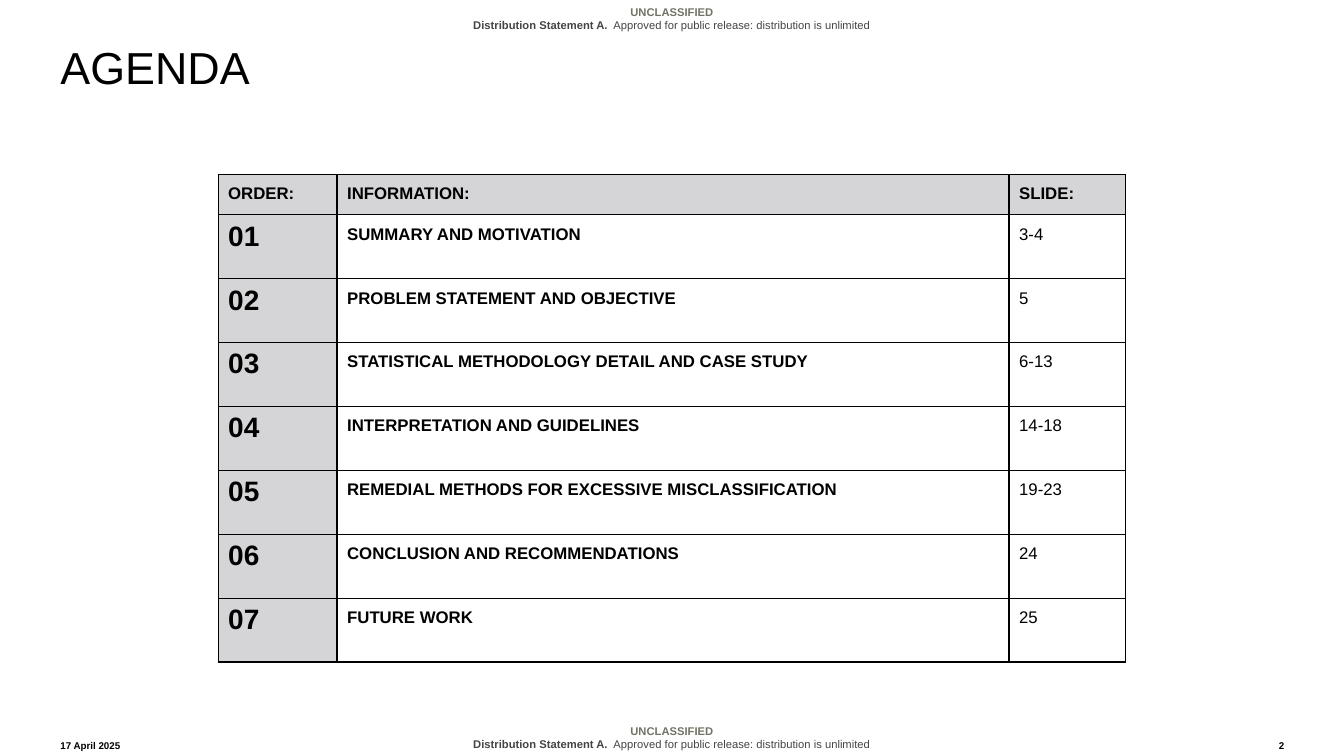
import pptx
import pptx.dml.color
import pptx.enum.text
import pptx.oxml
import pptx.oxml.ns
import pptx.util

Pt = pptx.util.Pt
RGBColor = pptx.dml.color.RGBColor
ALIGN = pptx.enum.text.PP_ALIGN
ANCHOR = pptx.enum.text.MSO_ANCHOR

BLACK = RGBColor(0x00, 0x00, 0x00)
OLIVE = RGBColor(0x72, 0x73, 0x65)
CHARCOAL = RGBColor(0x44, 0x44, 0x44)
GREY = RGBColor(0xD5, 0xD5, 0xD7)

HEADERS = ["ORDER:", "INFORMATION:", "SLIDE:"]
TOPICS = [
    ("SUMMARY AND MOTIVATION", "3-4"),
    ("PROBLEM STATEMENT AND OBJECTIVE", "5"),
    ("STATISTICAL METHODOLOGY DETAIL AND CASE STUDY", "6-13"),
    ("INTERPRETATION AND GUIDELINES", "14-18"),
    ("REMEDIAL METHODS FOR EXCESSIVE MISCLASSIFICATION", "19-23"),
    ("CONCLUSION AND RECOMMENDATIONS", "24"),
    ("FUTURE WORK", "25"),
]


def add_run(p, text, size=12, bold=False, color=BLACK, font="Arial"):
    r = p.add_run()
    r.text = text
    r.font.name = font
    r.font.size = Pt(size)
    r.font.bold = bold
    r.font.color.rgb = color


def set_margins(item, left, top, right, bottom):
    item.margin_left, item.margin_top = Pt(left), Pt(top)
    item.margin_right, item.margin_bottom = Pt(right), Pt(bottom)


def add_borders(cell, width=1, color=BLACK):
    tc_pr = cell._tc.get_or_add_tcPr()
    for side in "LRTB":
        tc_pr.append(pptx.oxml.parse_xml(
            f'<a:ln{side} {pptx.oxml.ns.nsdecls("a")} w="{Pt(width)}">'
            f'<a:solidFill><a:srgbClr val="{color}"/></a:solidFill></a:ln{side}>'))


class AgendaSlide:
    def __init__(self, prs):
        self.s = prs.slides.add_slide(prs.slide_layouts[5])

    def title(self, text, left, top, width, height):
        sp = self.s.shapes.title
        sp.left, sp.top, sp.width, sp.height = map(Pt, (left, top, width, height))
        tf = sp.text_frame
        tf.auto_size = pptx.enum.text.MSO_AUTO_SIZE.NONE
        tf.vertical_anchor = ANCHOR.TOP
        set_margins(tf, 0, 0, 0, 0)
        p = tf.paragraphs[0]
        p.alignment = ALIGN.LEFT
        p.line_spacing = 0.9
        add_run(p, text, size=32)

    def text_box(self, left, top, width, height, align, anchor):
        sp = self.s.shapes.add_textbox(Pt(left), Pt(top), Pt(width), Pt(height))
        tf = sp.text_frame
        tf.word_wrap = True
        tf.vertical_anchor = anchor
        set_margins(tf, 0, 3.6, 0, 3.6)
        tf.paragraphs[0].alignment = align
        return tf

    def marking(self, top, anchor):
        """Add the classification line and distribution statement."""
        tf = self.text_box(109.2, top, 741.6, 26.6, ALIGN.CENTER, anchor)
        add_run(tf.paragraphs[0], "UNCLASSIFIED", size=8, bold=True, color=OLIVE)
        p = tf.add_paragraph()
        p.alignment = ALIGN.CENTER
        add_run(p, "Distribution Statement A.", size=8, bold=True, color=CHARCOAL)
        add_run(p, "  Approved for public release: distribution is unlimited",
                size=8, color=CHARCOAL)

    def footer(self, text, left, width, align):
        tf = self.text_box(left, 522, width, 18, align, ANCHOR.BOTTOM)
        add_run(tf.paragraphs[0], text, size=7, bold=True)

    def cell(self, cell, text, bottom=18, fill=None, spacing=None, **style):
        set_margins(cell, 7.2, 7.2, 7.2, bottom)
        add_borders(cell)
        if fill is None:
            cell.fill.background()
        else:
            cell.fill.solid()
            cell.fill.fore_color.rgb = fill
        p = cell.text_frame.paragraphs[0]
        p.line_spacing = spacing
        add_run(p, text, **style)

    def agenda(self, left, top, widths, header_height, row_height):
        heights = [header_height] + [row_height] * len(TOPICS)
        table = self.s.shapes.add_table(
            len(heights), len(widths), Pt(left), Pt(top),
            Pt(sum(widths)), Pt(sum(heights))).table
        table.horz_banding = False
        table.first_row = False
        for column, width in zip(table.columns, widths):
            column.width = Pt(width)
        for row, height in zip(table.rows, heights):
            row.height = Pt(height)
        for col, text in enumerate(HEADERS):
            self.cell(table.cell(0, col), text, bottom=7.2, fill=GREY, bold=True)
        for row, (topic, pages) in enumerate(TOPICS, 1):
            self.cell(table.cell(row, 0), f"{row:02}", fill=GREY, spacing=0.85,
                      size=20, bold=True)
            self.cell(table.cell(row, 1), topic, bold=True)
            self.cell(table.cell(row, 2), pages)


def main():
    prs = pptx.Presentation()
    prs.slide_width, prs.slide_height = Pt(960), Pt(540)
    slide = AgendaSlide(prs)
    slide.marking(513.4, ANCHOR.BOTTOM)
    slide.marking(0, ANCHOR.TOP)
    slide.title("AGENDA", 43.2, 32.4, 648, 72)
    slide.agenda(155.8, 124.6, [85, 480, 83.2], 27.6, 44.28)
    slide.footer("17 April 2025", 43.2, 64.8, ALIGN.LEFT)
    slide.footer("2", 882.7, 34.6, ALIGN.RIGHT)
    prs.save("out.pptx")


if __name__ == "__main__":
    main()
